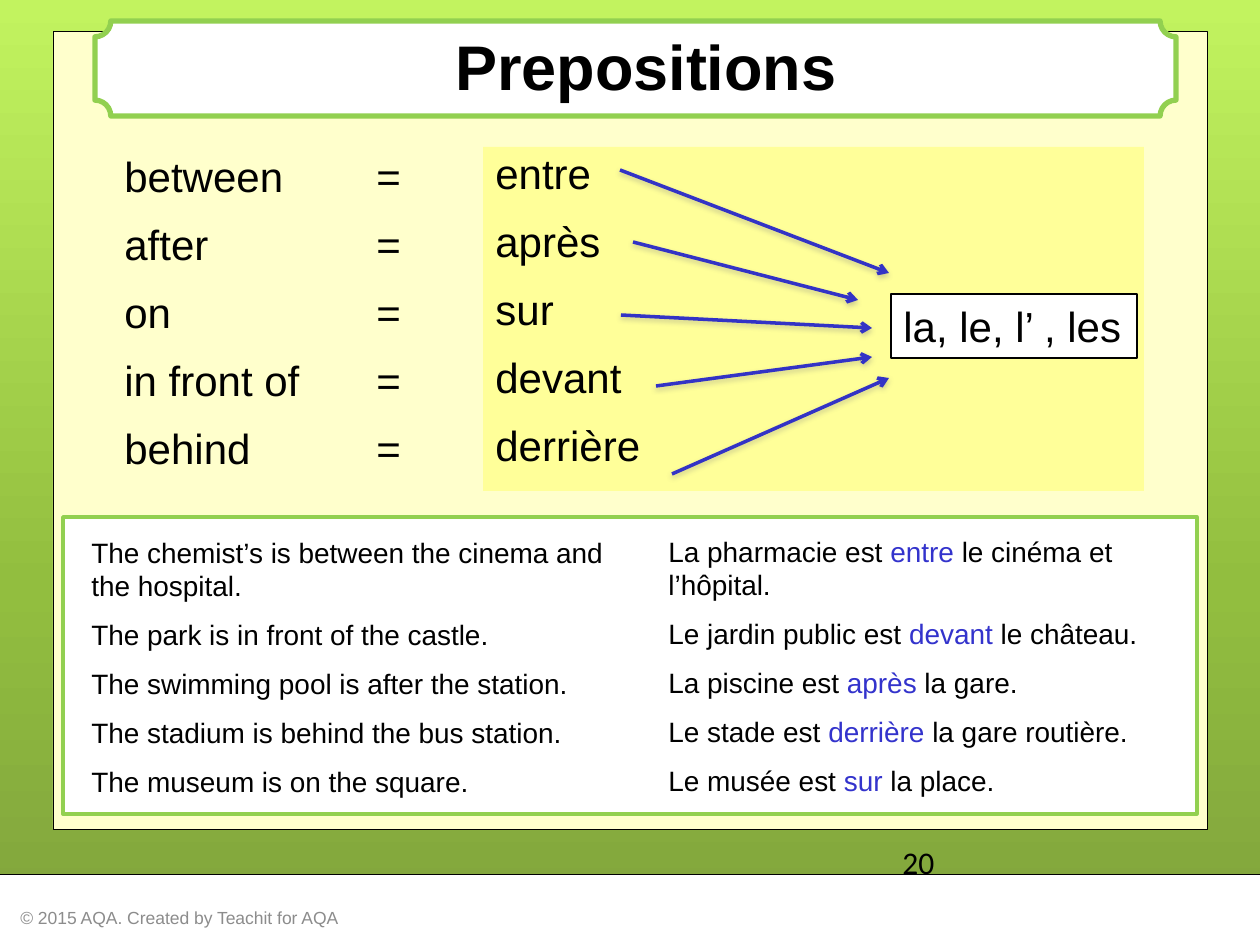
from copy import deepcopy

from lxml.etree import SubElement
from pptx import Presentation
from pptx.dml.color import RGBColor
from pptx.enum.shapes import MSO_CONNECTOR as CONN, MSO_SHAPE as SHAPE
from pptx.enum.text import MSO_ANCHOR as ANCHOR, PP_ALIGN as ALIGN
from pptx.oxml.ns import qn
from pptx.util import Pt

PX = 914400 / 126
COLORS = {
    "black": "000000", "white": "FFFFFF", "grey": "8C8C8C", "cream": "FFFFCC",
    "yellow": "FFFF99", "green": "92D050", "blue": "3333CC", "arrow": "3333C5",
    "shadow": "808080",
}
BACKGROUND = [(0, "C2F35F"), (0.62, "92BE3F"), (1, "80A33D")]

PREPOSITIONS = [("between", "entre"), ("after", "après"), ("on", "sur"),
                ("in front of", "devant"), ("behind", "derrière")]
ENGLISH = ["The chemist’s is between the cinema and \nthe hospital.",
           "The park is in front of the castle.",
           "The swimming pool is after the station.",
           "The stadium is behind the bus station.",
           "The museum is on the square."]
# Text before the preposition, the preposition, text after it
FRENCH = [("La pharmacie est ", "entre ", "le cinéma et \nl’hôpital."),
          ("Le jardin public est ", "devant ", "le château."),
          ("La piscine est ", "après", " la gare."),
          ("Le stade est ", "derrière", " la gare routière."),
          ("Le musée est ", "sur ", "la place.")]
ARROWS = [(620, 170, 889, 273), (672, 474, 889, 378), (633, 242, 858, 300),
          (621, 315, 872, 328), (656, 386, 872, 357)]


def px(n):
    return round(n * PX)


def rgb(name):
    return RGBColor.from_string(COLORS[name])


class Deck:
    def __init__(self, width, height):
        self.prs = Presentation()
        self.prs.slide_width, self.prs.slide_height = px(width), px(height)
        self.s = self.prs.slides.add_slide(self.prs.slide_layouts[5])

    def background(self, stops):
        fill = self.s.background.fill
        fill.gradient()
        fill.gradient_angle = 270
        gs_list = self.s._element.find(".//" + qn("a:gsLst"))
        while len(gs_list) < len(stops):
            gs_list.append(deepcopy(gs_list[0]))
        for stop, (position, color) in zip(fill.gradient_stops, stops):
            stop.position = position
            stop.color.rgb = RGBColor.from_string(color)

    def fill_text(self, tf, rows, size, font="Arial", color="black", bold=False,
                  align=ALIGN.LEFT, gap=0, spacing=1.0, tab=None, wrap=True,
                  anchor=ANCHOR.TOP):
        """Each row is a list of (text, color or None) runs."""
        tf.word_wrap, tf.vertical_anchor = wrap, anchor
        for i, row in enumerate(rows):
            p = tf.paragraphs[0] if i == 0 else tf.add_paragraph()
            p.alignment, p.line_spacing = align, spacing
            p.space_before = Pt(gap if i else 0)
            if tab:
                tabs = SubElement(p._p.get_or_add_pPr(), qn("a:tabLst"))
                SubElement(tabs, qn("a:tab"), pos=str(px(tab)), algn="l")
            for text, run_color in row:
                for j, line in enumerate(text.split("\n")):
                    if j:
                        p.add_line_break()
                    r = p.add_run()
                    r.text = line
                    r.font.name, r.font.size, r.font.bold = font, Pt(size), bold
                    r.font.color.rgb = rgb(run_color or color)

    def title(self, text, x, y, w, h):
        sp = self.s.shapes.title
        sp.left, sp.top, sp.width, sp.height = map(px, (x, y, w, h))
        self.s.shapes._spTree.append(sp._element)  # bring in front of the plaque
        self.fill_text(sp.text_frame, [[(text, None)]], 36, bold=True,
                       align=ALIGN.CENTER)

    def text(self, rows, x, y, w, h, size, **style):
        sp = self.s.shapes.add_textbox(*map(px, (x, y, w, h)))
        self.fill_text(sp.text_frame, rows, size, **style)

    def box(self, x, y, w, h, fill, line=None, weight=1, kind=SHAPE.RECTANGLE):
        sp = self.s.shapes.add_shape(kind, *map(px, (x, y, w, h)))
        sp.shadow.inherit = False
        sp.fill.solid()
        sp.fill.fore_color.rgb = rgb(fill)
        if line:
            sp.line.color.rgb, sp.line.width = rgb(line), Pt(weight)
        else:
            sp.line.fill.background()
        return sp

    def line(self, x1, y1, x2, y2, color, weight, arrow=False):
        c = self.s.shapes.add_connector(CONN.STRAIGHT, *map(px, (x1, y1, x2, y2)))
        c.line.color.rgb, c.line.width = rgb(color), Pt(weight)
        if arrow:
            SubElement(c.line._get_or_add_ln(), qn("a:tailEnd"), type="arrow")
        effects = SubElement(c._element.spPr, qn("a:effectLst"))
        if arrow:
            shadow = SubElement(effects, qn("a:outerShdw"), blurRad=str(Pt(3.1)),
                                dist=str(Pt(1.6)), dir="5400000", rotWithShape="0")
            clr = SubElement(shadow, qn("a:srgbClr"), val=COLORS["shadow"])
            SubElement(clr, qn("a:alpha"), val="38000")


def main():
    deck = Deck(1260, 945)
    deck.background(BACKGROUND)

    # Footer
    deck.box(0, 874, 1260, 71, "white")
    deck.line(0, 874, 1260, 874, "black", 0.5)
    deck.text([[("© 2015 AQA. Created by Teachit for AQA", None)]],
              8, 893, 504, 50, 10, color="grey", anchor=ANCHOR.MIDDLE)
    deck.text([[("20", None)]], 890, 837, 284, 50, 18, font="Calibri")

    # Panels and title
    deck.box(53, 31, 1155, 798, "cream", "black", 0.5)
    deck.box(63, 517, 1134, 297, "white", "green", 2)
    plaque = deck.box(95, 21, 1081, 95, "white", "green", 3, SHAPE.PLAQUE)
    plaque.adjustments[0] = 0.167
    deck.title("Prepositions", 147, 21, 998, 89)

    # Example sentences
    examples = dict(size=16, gap=8.75)
    deck.text([[(a, None), (b, "blue"), (c, None)] for a, b, c in FRENCH],
              656, 528, 561, 285, **examples)
    deck.text([[(text, None)] for text in ENGLISH], 79, 529, 582, 285, **examples)

    # Preposition list
    words = dict(size=24, gap=13, spacing=0.9)
    french = deck.box(483, 147, 661, 344, "yellow")
    deck.fill_text(french.text_frame, [[(fr, None)] for _, fr in PREPOSITIONS], **words)
    deck.text([[(en + "\t=", None)] for en, _ in PREPOSITIONS],
              112, 150, 483, 344, tab=252, **words)

    # Articles and the arrows to them
    articles = deck.box(891, 294, 246, 64, "white", "black", 1)
    deck.fill_text(articles.text_frame, [[("la, le, l’ , les", None)]], 24, wrap=False)
    for ends in ARROWS:
        deck.line(*ends, "arrow", 2, arrow=True)

    deck.prs.save("out.pptx")


if __name__ == "__main__":
    main()
